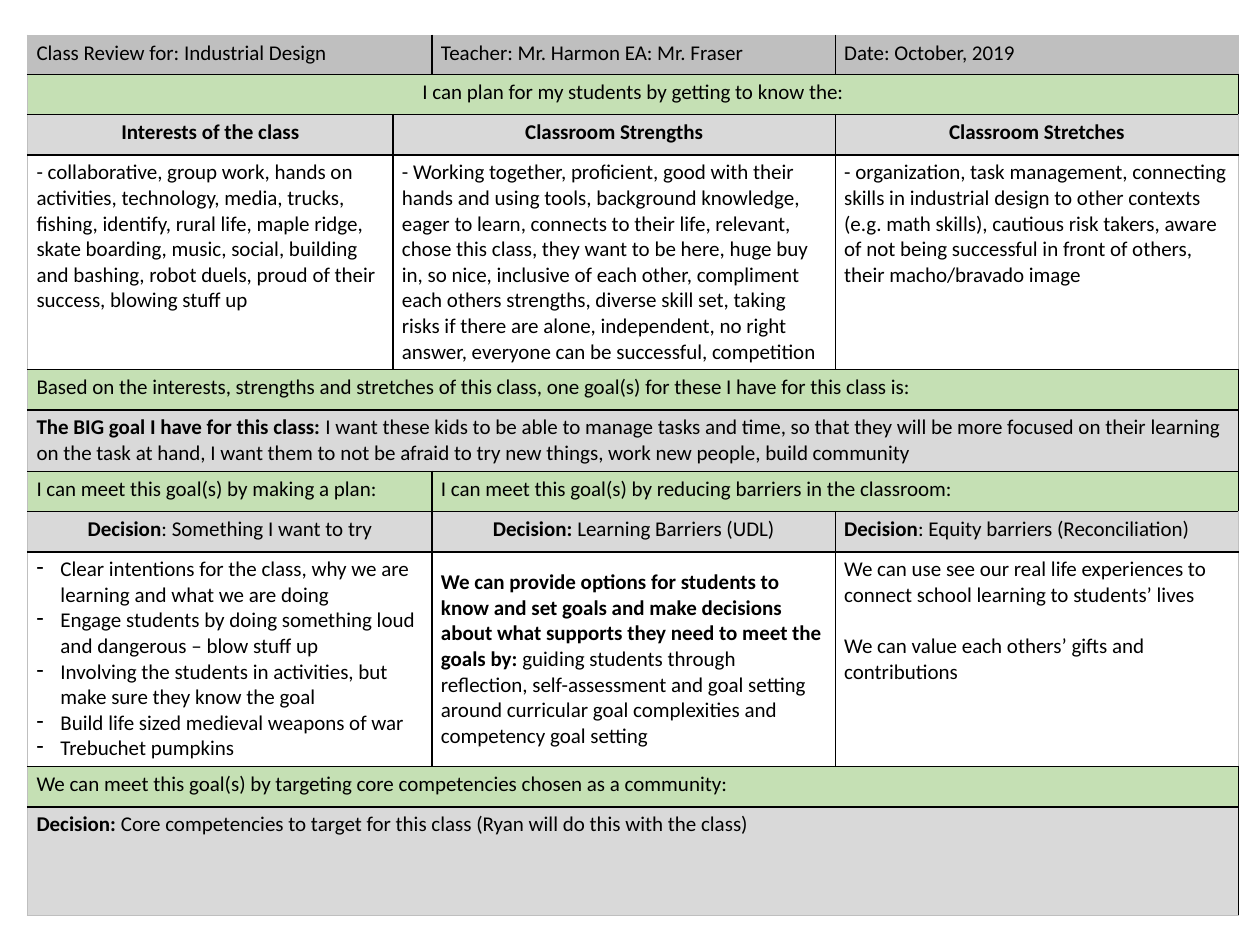
import pptx
import pptx.dml.color
import pptx.enum.text
import pptx.oxml
import pptx.oxml.ns
import pptx.util

Inches = pptx.util.Inches
Pt = pptx.util.Pt
Align = pptx.enum.text.PP_ALIGN
Anchor = pptx.enum.text.MSO_ANCHOR
COLORS = {
    "text": "000000",
    "line": "000000",
    "edge": "BFBFBF",
    "head": "BFBFBF",
    "green": "C5E0B4",
    "gray": "D9D9D9",
    "white": "FFFFFF",
}
WIDTHS = [2.9, 0.31, 3.2, 3.2]
LEFT, TOP = 0.22, 0.28


def tone(name):
    return pptx.dml.color.RGBColor.from_string(COLORS[name])


def write(para, text, size=12, bold=False, font="Calibri", color="text"):
    run = para.add_run()
    run.text = text
    run.font.size = Pt(size)
    run.font.bold = bold
    run.font.name = font
    run.font.color.rgb = tone(color)


class Deck:
    def __init__(self):
        self.file = pptx.Presentation()
        self.file.slide_width = Inches(10)
        self.file.slide_height = Inches(7.5)
        self.slide = self.file.slides.add_slide(self.file.slide_layouts[6])

    def table(self, rows):
        tall = sum(row[0] for row in rows)
        frame = self.slide.shapes.add_table(
            len(rows), len(WIDTHS), Inches(LEFT), Inches(TOP),
            Inches(sum(WIDTHS)), Inches(tall))
        grid = frame.table
        grid.first_row = grid.horz_banding = False
        for col, width in zip(grid.columns, WIDTHS):
            col.width = Inches(width)
        for r, (height, fill, parts) in enumerate(rows):
            grid.rows[r].height = Inches(height)
            for c in range(len(WIDTHS)):
                self.border(grid.cell(r, c), {
                    "L": c == 0, "R": c == len(WIDTHS) - 1,
                    "T": r == 0, "B": r == len(rows) - 1})
            start = 0
            for span, paras, style in parts:
                cell = grid.cell(r, start)
                if span > 1:
                    cell.merge(grid.cell(r, start + span - 1))
                self.fill(cell, fill, paras, **style)
                start += span

    def fill(self, cell, fill, paras, align=Align.LEFT, middle=False,
             bullet=False, gap=0):
        cell.fill.solid()
        cell.fill.fore_color.rgb = tone(fill)
        cell.margin_left = cell.margin_right = Inches(0.07)
        cell.margin_top = cell.margin_bottom = Inches(0 if middle else 0.04)
        cell.vertical_anchor = Anchor.MIDDLE if middle else Anchor.TOP
        for i, (strong, plain) in enumerate(paras):
            frame = cell.text_frame
            para = frame.add_paragraph() if i else frame.paragraphs[0]
            para.alignment = align
            if i and gap:
                para.space_before = Pt(gap)
            if bullet:
                self.bullet(para)
            if strong:
                write(para, strong, bold=True)
            if plain:
                write(para, plain)

    def bullet(self, para):
        props = para._p.get_or_add_pPr()
        props.set("marL", str(Inches(0.19)))
        props.set("indent", str(-Inches(0.19)))
        mark = pptx.oxml.parse_xml(
            f'<a:buChar {pptx.oxml.ns.nsdecls("a")} char="-"/>')
        props.append(mark)

    def border(self, cell, outer):
        props = cell._tc.get_or_add_tcPr()
        for i, (side, edge) in enumerate(outer.items()):
            color = COLORS["edge" if edge else "line"]
            props.insert(i, pptx.oxml.parse_xml(
                f'<a:ln{side} {pptx.oxml.ns.nsdecls("a")} w="{Pt(1)}">'
                f'<a:solidFill><a:srgbClr val="{color}"/></a:solidFill>'
                f'</a:ln{side}>'))


def part(span, *paras, **style):
    pairs = [("", p) if isinstance(p, str) else p for p in paras]
    return span, pairs, style


MID = {"align": Align.CENTER}
ROWS = [
    (0.31, "head", [
        part(2, "Class Review for: Industrial Design"),
        part(1, "Teacher: Mr. Harmon EA: Mr. Fraser"),
        part(1, "Date: October, 2019")]),
    (0.32, "green", [
        part(4, "I can plan for my students by getting to know the:", **MID)]),
    (0.32, "gray", [
        part(1, ("Interests of the class", ""), **MID),
        part(2, ("Classroom Strengths", ""), **MID),
        part(1, ("Classroom Stretches", ""), **MID)]),
    (1.68, "white", [
        part(1, "- collaborative, group work, hands on activities, technology, "
             "media, trucks, fishing, identify, rural life, maple ridge, skate "
             "boarding, music, social, building and bashing, robot duels, "
             "proud of their success, blowing stuff up"),
        part(2, "- Working together, proficient, good with their hands and "
             "using tools, background knowledge, eager to learn, connects to "
             "their life, relevant, chose this class, they want to be here, "
             "huge buy in, so nice, inclusive of each other, compliment each "
             "others strengths, diverse skill set, taking risks if there are "
             "alone, independent, no right answer, everyone can be successful, "
             "competition"),
        part(1, "- organization, task management, connecting skills in "
             "industrial design to other contexts (e.g. math skills), cautious "
             "risk takers, aware of not being successful in front of others, "
             "their macho/bravado image")]),
    (0.32, "green", [
        part(4, "Based on the interests, strengths and stretches of this "
             "class, one goal(s) for these I have for this class is:")]),
    (0.48, "gray", [
        part(4, ("The BIG goal I have for this class: ",
                 "I want these kids to be able to manage tasks and time, so "
                 "that they will be more focused on their learning on the task "
                 "at hand, I want them to not be afraid to try new things, "
                 "work new people, build community"))]),
    (0.32, "green", [
        part(2, "I can meet this goal(s) by making a plan:"),
        part(2, "I can meet this goal(s) by reducing barriers in the "
             "classroom:")]),
    (0.32, "gray", [
        part(2, ("Decision", ": Something I want to try"), **MID),
        part(1, ("Decision: ", "Learning Barriers (UDL)"), **MID),
        part(1, ("Decision", ": Equity barriers (Reconciliation)"))]),
    (1.68, "white", [
        part(2,
             "Clear intentions for the class, why we are learning and what we "
             "are doing",
             "Engage students by doing something loud and dangerous – blow "
             "stuff up",
             "Involving the students in activities, but make sure they know "
             "the goal",
             "Build life sized medieval weapons of war",
             "Trebuchet pumpkins", bullet=True),
        part(1, ("We can provide options for students to know and set goals "
                 "and make decisions about what supports they need to meet the "
                 "goals by: ",
                 "guiding students through reflection, self-assessment and "
                 "goal setting around curricular goal complexities and "
                 "competency goal setting"), middle=True),
        part(1,
             "We can use see our real life experiences to connect school "
             "learning to students’ lives",
             "We can value each others’ gifts and contributions", gap=14.65)]),
    (0.32, "green", [
        part(4, "We can meet this goal(s) by targeting core competencies "
             "chosen as a community:")]),
    (0.86, "gray", [
        part(4, ("Decision: ", "Core competencies to target for this class "
                 "(Ryan will do this with the class)"))]),
]


def main():
    deck = Deck()
    deck.table(ROWS)
    deck.file.save("out.pptx")


if __name__ == "__main__":
    main()
